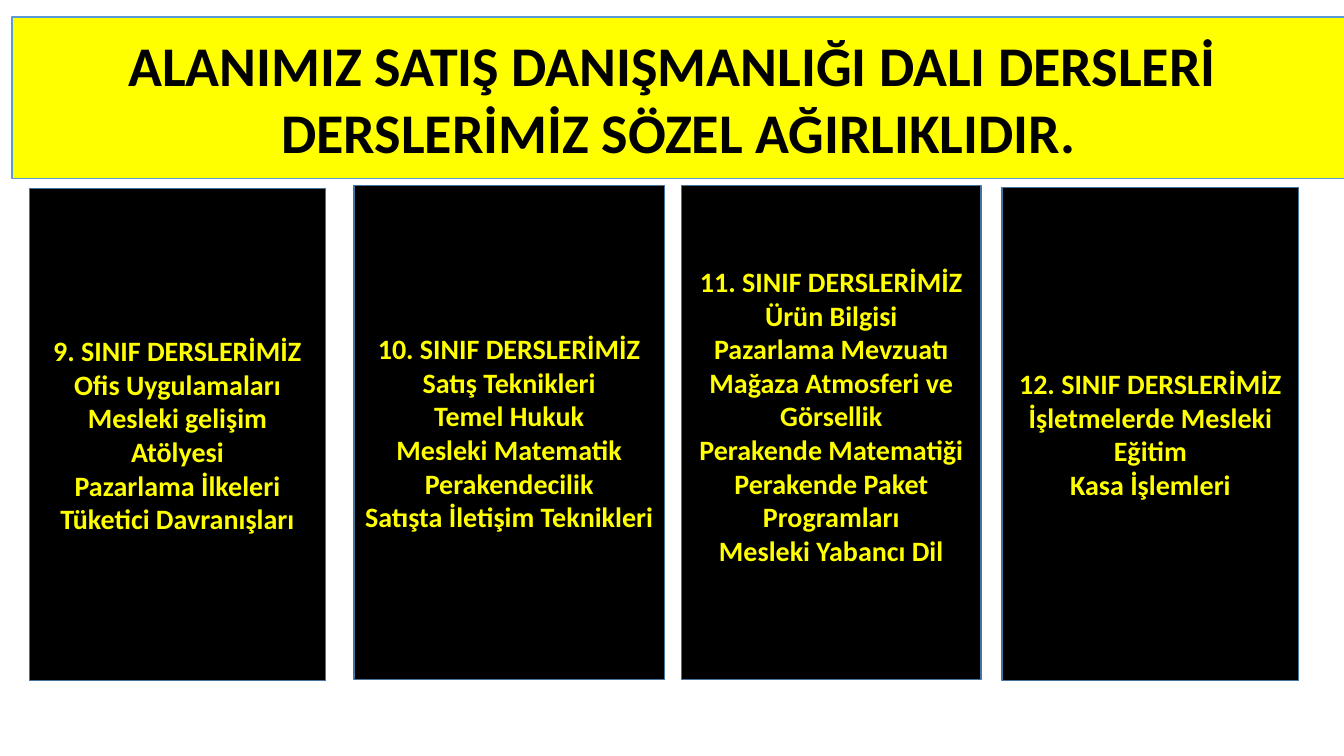
from dataclasses import dataclass

from lxml.etree import SubElement
from pptx import Presentation
from pptx.dml.color import RGBColor
from pptx.enum.shapes import MSO_SHAPE as Shape
from pptx.enum.text import MSO_ANCHOR as Anchor, MSO_AUTO_SIZE as AutoSize, PP_ALIGN as Align
from pptx.oxml.ns import qn
from pptx.util import Inches, Pt


@dataclass(frozen=True)
class Theme:
    font: str = "Calibri"
    yellow: RGBColor = RGBColor(0xFF, 0xFF, 0x00)
    black: RGBColor = RGBColor(0x00, 0x00, 0x00)
    title_line: RGBColor = RGBColor(0x5B, 0x9B, 0xD5)
    card_line: RGBColor = RGBColor(0x43, 0x73, 0x9E)
    line_width: Pt = Pt(1)
    title_size: Pt = Pt(40)
    card_size: Pt = Pt(20)


@dataclass(frozen=True)
class GradeCard:
    grade: int
    left: float
    top: float
    width: float
    height: float
    courses: tuple[str, ...]
    bottom_margin: float = 0.05


THEME = Theme()

TITLE_LINES = (
    "ALANIMIZ SATIŞ DANIŞMANLIĞI DALI DERSLERİ ",
    "DERSLERİMİZ SÖZEL AĞIRLIKLIDIR.",
)

GRADE_CARDS = (
    GradeCard(9, 0.29, 1.87, 2.94, 4.88, (
        "Ofis Uygulamaları", "Mesleki gelişim Atölyesi",
        "Pazarlama İlkeleri", "Tüketici Davranışları")),
    GradeCard(10, 3.51, 1.84, 3.08, 4.9, (
        "Satış Teknikleri", "Temel Hukuk", "Mesleki Matematik",
        "Perakendecilik", "Satışta İletişim Teknikleri")),
    GradeCard(11, 6.76, 1.84, 2.97, 4.9, (
        "Ürün Bilgisi", "Pazarlama Mevzuatı", "Mağaza Atmosferi ve Görsellik",
        "Perakende Matematiği", "Perakende Paket Programları",
        "Mesleki Yabancı Dil"), bottom_margin=0.38),
    GradeCard(12, 9.94, 1.86, 2.94, 4.89, (
        "İşletmelerde Mesleki Eğitim", "Kasa İşlemleri")),
)


def set_attributes(target, values: dict) -> None:
    for name, value in values.items():
        setattr(target, name, value)


def place(shape, left: float, top: float, width: float, height: float) -> None:
    set_attributes(shape, {
        "left": Inches(left), "top": Inches(top),
        "width": Inches(width), "height": Inches(height),
    })


def paint(shape, fill: RGBColor, line: RGBColor) -> None:
    shape.fill.solid()
    shape.fill.fore_color.rgb = fill
    shape.line.color.rgb = line
    shape.line.width = THEME.line_width


def write_lines(shape, lines: tuple[str, ...], size: Pt, color: RGBColor,
                bottom_margin: float = 0.05) -> None:
    frame = shape.text_frame
    set_attributes(frame, {
        "text": "\n".join(lines), "word_wrap": True,
        "auto_size": AutoSize.NONE, "vertical_anchor": Anchor.MIDDLE,
        "margin_left": Inches(0.1), "margin_right": Inches(0.1),
        "margin_top": Inches(0.05), "margin_bottom": Inches(bottom_margin),
    })
    for paragraph in frame.paragraphs:
        set_attributes(paragraph, {
            "alignment": Align.CENTER, "line_spacing": 1.0,
            "space_before": Pt(0), "space_after": Pt(0),
        })
        for run in paragraph.runs:
            set_attributes(run.font, {"name": THEME.font, "size": size, "bold": True})
            run.font.color.rgb = color


def add_title(slide) -> None:
    title = slide.shapes.title
    place(title, 0.12, 0.17, 13.22, 1.6)
    # Rounded outline for the title placeholder
    geometry = SubElement(title.element.spPr, qn("a:prstGeom"), prst="roundRect")
    SubElement(geometry, qn("a:avLst"))
    paint(title, THEME.yellow, THEME.title_line)
    write_lines(title, TITLE_LINES, THEME.title_size, THEME.black)


def add_grade_card(slide, card: GradeCard) -> None:
    shape = slide.shapes.add_shape(
        Shape.RECTANGLE, Inches(card.left), Inches(card.top),
        Inches(card.width), Inches(card.height))
    shape.shadow.inherit = False
    paint(shape, THEME.black, THEME.card_line)
    heading = f"{card.grade}. SINIF DERSLERİMİZ"
    write_lines(shape, (heading, *card.courses), THEME.card_size, THEME.yellow,
                card.bottom_margin)


def main() -> None:
    presentation = Presentation()
    presentation.slide_width = Inches(13.33)
    presentation.slide_height = Inches(7.5)
    title_only = presentation.slide_layouts[5]
    slide = presentation.slides.add_slide(title_only)

    # Title banner, then one card per school year
    add_title(slide)
    for card in GRADE_CARDS:
        add_grade_card(slide, card)

    presentation.save("out.pptx")


if __name__ == "__main__":
    main()
